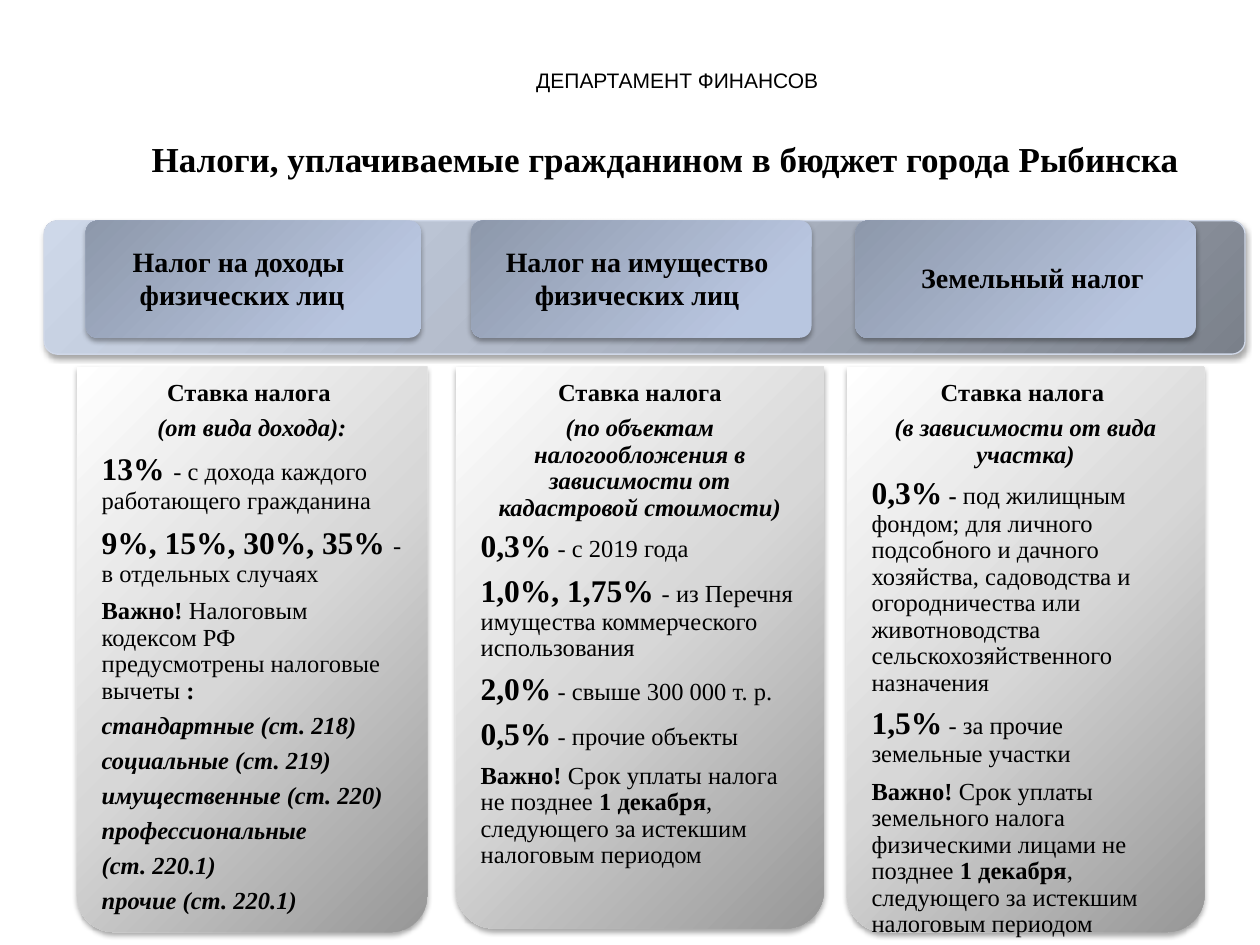
from dataclasses import dataclass

from lxml.etree import SubElement
from pptx import Presentation
from pptx.dml.color import RGBColor
from pptx.enum.shapes import MSO_SHAPE as SHAPE
from pptx.enum.text import MSO_AUTO_SIZE as FIT, PP_ALIGN as ALIGN
from pptx.oxml.ns import qn
from pptx.util import Cm, Pt


@dataclass(frozen=True)
class Theme:
    serif: str = "Times New Roman"
    sans: str = "Arial"
    ink: str = "000000"
    bar_line: str = "D0D8E8"
    bar: tuple = ((0, "7A808A"), (50, "AEB6C5"), (100, "CED8E9"))
    header: tuple = ((0, "8D98AB"), (80, "B8C5DF"), (100, "B8C6E0"))
    panel: tuple = ((0, "979797"), (50, "D7D7D7"), (100, "FFFFFF"))
    department: int = 12
    title: int = 20
    label: int = 16
    body: int = 14
    rate: int = 18


T = Theme()

# Run styles: size, bold, italic
RATE = (T.rate, True, False)
BOLD = (T.body, True, False)
PLAIN = (T.body, False, False)
ITALIC = (T.body, True, True)
LABEL = (T.label, True, False)

# Header (left, width), panel (left, width, height), body paragraphs as (text, style) runs
COLUMNS = [
    ((1.73, 6.76), (1.55, 7.06, 11.4), [
        [("Ставка налога ", BOLD)],
        [("(от вида дохода):", ITALIC)],
        [("13%", RATE), (" ", (20, True, False)),
         ("- с дохода каждого работающего гражданина", PLAIN)],
        [("9%, 15%, 30%, 35% ", RATE), ("- в отдельных случаях", PLAIN)],
        [("Важно! ", BOLD),
         ("Налоговым кодексом РФ предусмотрены налоговые вычеты", PLAIN),
         (" :", BOLD)],
        [("стандартные (ст. 218)", ITALIC)],
        [("социальные (ст. 219)", ITALIC)],
        [("имущественные (ст. 220)", ITALIC)],
        [("профессиональные", ITALIC)],
        [("(ст. 220.1)", ITALIC)],
        [("прочие (ст. 220.1)", ITALIC)],
    ]),
    ((9.5, 6.86), (9.19, 7.42, 11.33), [
        [("Ставка налога", BOLD)],
        [("(по объектам налогообложения в зависимости от кадастровой стоимости)", ITALIC)],
        [("0,3%", RATE), (" ", BOLD), ("- с 2019 года", PLAIN)],
        [("1,0%, 1,75% ", RATE),
         ("- из Перечня имущества коммерческого использования", PLAIN)],
        [("2,0%", RATE), (" ", BOLD), ("- свыше 300 000 т. р.", PLAIN)],
        [("0,5%", RATE), (" ", BOLD), ("- прочие объекты", PLAIN)],
        [("Важно! ", BOLD), ("Срок уплаты налога не позднее ", PLAIN),
         ("1 декабря", BOLD), (", следующего за истекшим налоговым периодом", PLAIN)],
    ]),
    ((17.25, 6.86), (17.07, 7.21, 11.4), [
        [("Ставка налога ", BOLD)],
        [("(в зависимости от вида участка)", ITALIC)],
        [("0,3%", RATE), (" - ", BOLD),
         ("под жилищным фондом; для личного подсобного и дачного хозяйства, "
          "садоводства и огородничества или животноводства "
          "сельскохозяйственного назначения", PLAIN)],
        [("1,5%", RATE), (" ", BOLD), ("- за прочие земельные участки", PLAIN)],
        [("Важно! ", BOLD),
         ("Срок уплаты земельного налога физическими лицами не позднее ", PLAIN),
         ("1 декабря", BOLD), (", следующего за истекшим налоговым периодом", PLAIN)],
    ]),
]

LABELS = [
    ((2.39, 4.8, 4.98, 1.63), ["Налог на доходы ", "физических лиц"]),
    ((9.91, 4.8, 5.87, 1.63), ["Налог на имущество", "физических лиц"]),
    ((18.29, 5.13, 5.05, 0.94), ["Земельный налог"]),
]


def add_gradient(sp, stops, angle=None, focus=None):
    """Linear gradient by angle, or a circular one by its focus edges."""
    grad = sp._element.spPr.makeelement(qn("a:gradFill"), {"rotWithShape": "1"})
    sp._element.spPr.insert(2, grad)
    gs_lst = SubElement(grad, qn("a:gsLst"))
    for pos, color in stops:
        gs = SubElement(gs_lst, qn("a:gs"), pos=str(pos * 1000))
        SubElement(gs, qn("a:srgbClr"), val=color)
    if focus:
        circle = SubElement(grad, qn("a:path"), path="circle")
        edges = {k: str(v * 1000) for k, v in zip("ltrb", focus)}
        SubElement(circle, qn("a:fillToRect"), edges)
    else:
        SubElement(grad, qn("a:lin"), ang=str(angle * 60000), scaled="0")


def add_shadow(sp):
    sp.shadow.inherit = False
    effects = sp._element.spPr.find(qn("a:effectLst"))
    shadow = SubElement(effects, qn("a:outerShdw"), blurRad=str(Pt(3.1)),
                        dist=str(Pt(1.8)), dir="5400000", rotWithShape="0")
    color = SubElement(shadow, qn("a:srgbClr"), val="000000")
    SubElement(color, qn("a:alpha"), val="35000")


def add_block(slide, kind, box, adjustments, stops, line=None, **gradient):
    sp = slide.shapes.add_shape(kind, *map(Cm, box))
    for i, value in enumerate(adjustments):
        sp.adjustments[i] = value
    add_gradient(sp, stops, **gradient)
    if line:
        sp.line.color.rgb = RGBColor.from_string(line)
        sp.line.width = Pt(0.75)
    else:
        sp.line.fill.background()
    add_shadow(sp)
    return sp


def add_run(p, text, style, font):
    r = p.add_run()
    r.text = text
    r.font.name = font
    r.font.size, r.font.bold, r.font.italic = Pt(style[0]), style[1], style[2]
    r.font.color.rgb = RGBColor.from_string(T.ink)


def add_text(slide, box, paragraphs, font=T.serif, wrap=True, fit=FIT.SHAPE_TO_FIT_TEXT):
    tf = slide.shapes.add_textbox(*map(Cm, box)).text_frame
    tf.word_wrap = wrap
    tf.auto_size = fit
    for i, runs in enumerate(paragraphs):
        p = tf.paragraphs[0] if i == 0 else tf.add_paragraph()
        p.alignment = ALIGN.CENTER
        for text, style in runs:
            add_run(p, text, style, font)
    return tf


def add_body(slide, box, paragraphs):
    tf = add_text(slide, box, paragraphs, fit=FIT.NONE)
    tf.margin_left = tf.margin_right = tf.margin_top = tf.margin_bottom = Cm(0.28)
    for i, p in enumerate(tf.paragraphs):
        p.alignment = ALIGN.CENTER if i < 2 else ALIGN.LEFT
        p.line_spacing = 0.9
        # Space after as a share of the line
        after = SubElement(p._p.get_or_add_pPr(), qn("a:spcAft"))
        SubElement(after, qn("a:spcPct"), val="35000")


def add_column(slide, header, panel, paragraphs):
    left, width = header
    add_block(slide, SHAPE.ROUNDED_RECTANGLE, (left, 4.45, width, 2.36), [0.1],
              T.header, focus=(0, 0, 100, 100))
    left, width, height = panel
    sp = add_block(slide, SHAPE.ROUND_2_SAME_RECTANGLE, (left, 7.39, width, height),
                   [0.105, 0], T.panel, focus=(100, 100, 0, 0))
    sp.rotation = 180
    add_body(slide, (left + 0.22, 7.39, width - 0.44, height - 0.22), paragraphs)


def main():
    prs = Presentation()
    prs.slide_width, prs.slide_height = Cm(25.4), Cm(19.05)
    slide = prs.slides.add_slide(prs.slide_layouts[6])

    # Title
    add_text(slide, (1.6, 2.64, 23.8, 1.12),
             [[("Налоги, уплачиваемые гражданином в бюджет города Рыбинска ",
                (T.title, True, False))]])

    # Bar and tax columns
    add_block(slide, SHAPE.ROUNDED_RECTANGLE, (0.89, 4.45, 24.21, 2.69), [0.1],
              T.bar, line=T.bar_line, angle=225)
    for header, panel, paragraphs in COLUMNS:
        add_column(slide, header, panel, paragraphs)

    # Column labels
    for box, lines in LABELS:
        add_text(slide, box, [[(line, LABEL)] for line in lines], wrap=False)

    # Department
    add_text(slide, (2.31, 1.24, 22.81, 0.76),
             [[("ДЕПАРТАМЕНТ ФИНАНСОВ ", (T.department, False, False))]], font=T.sans)

    prs.save("out.pptx")


if __name__ == "__main__":
    main()
